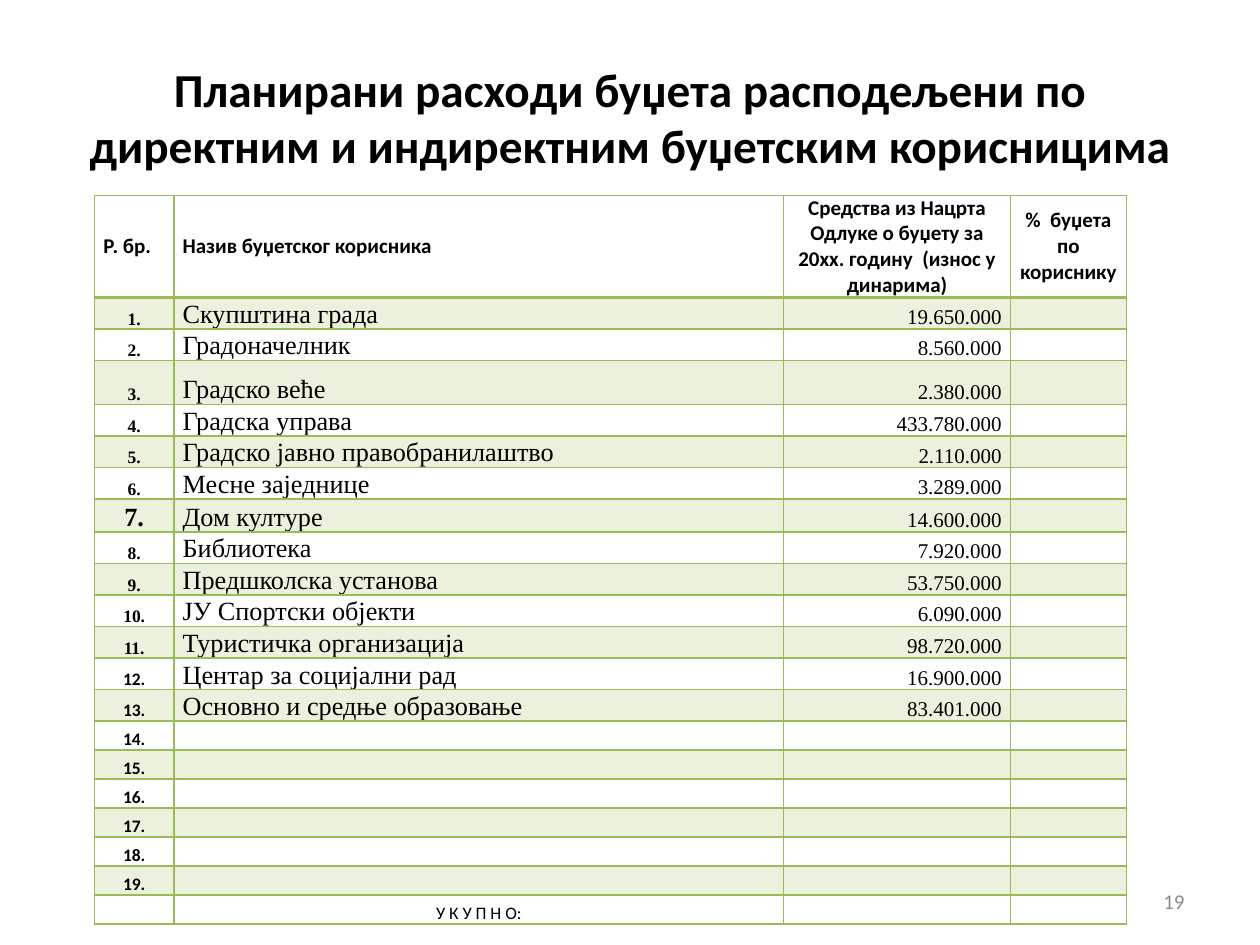
import dataclasses

import lxml.etree
import pptx
import pptx.dml.color
import pptx.enum.text
import pptx.oxml.ns
import pptx.util

Inches, Pt = pptx.util.Inches, pptx.util.Pt
ALIGN = pptx.enum.text.PP_ALIGN
ANCHOR = pptx.enum.text.MSO_ANCHOR
qn = pptx.oxml.ns.qn

COLORS = {"text": "000000", "green": "9BBB59", "number": "8C8C8C"}
SANS, SERIF = "Calibri", "Times New Roman"


@dataclasses.dataclass
class Style:
    size: float
    font: str = SANS
    bold: bool = False
    align: ALIGN = ALIGN.LEFT
    color: str = "text"


@dataclasses.dataclass
class Recipient:
    name: str = ""
    amount: str = ""
    height: float = 0.23
    number_size: int = 10


HEADERS = [
    ("Р. бр.", ALIGN.LEFT),
    ("Назив буџетског корисника", ALIGN.LEFT),
    ("Средства из Нацрта Одлуке о буџету за 20хх. годину  (износ у динарима)",
     ALIGN.CENTER),
    ("%  буџета по кориснику", ALIGN.CENTER),
]
RECIPIENTS = [
    Recipient("Скупштина града", "19.650.000"),
    Recipient("Градоначелник", "8.560.000", height=0.25),
    Recipient("Градско веће", "2.380.000", height=0.35),
    Recipient("Градска управа", "433.780.000"),
    Recipient("Градско јавно правобранилаштво", "2.110.000"),
    Recipient("Месне заједнице", "3.289.000"),
    Recipient("Дом културе", "14.600.000", height=0.26, number_size=15),
    Recipient("Библиотека", "7.920.000"),
    Recipient("Предшколска установа", "53.750.000"),
    Recipient("ЈУ Спортски објекти", "6.090.000"),
    Recipient("Туристичка организација", "98.720.000"),
    Recipient("Центар за социјални рад", "16.900.000"),
    Recipient("Основно и средње образовање", "83.401.000"),
] + [Recipient() for _ in range(6)]
COLUMN_WIDTHS = [0.63, 4.84, 1.8, 0.92]
HEADER_HEIGHT, TOTAL_HEIGHT = 0.81, 0.23
LAST_SERIF_NUMBER = 11

NAME = Style(15, SERIF)
AMOUNT = Style(12, SERIF, align=ALIGN.RIGHT)
SMALL = Style(10, align=ALIGN.CENTER)


def write(tf, text: str, style: Style) -> None:
    p = tf.paragraphs[0]
    p.alignment = style.align
    if not text:
        # An empty cell keeps a small line height
        end = lxml.etree.SubElement(p._p, qn("a:endParaRPr"))
        end.set("sz", str(int(style.size * 100)))
        return
    r = p.add_run()
    r.text = text
    formats = {"size": Pt(style.size), "name": style.font, "bold": style.bold}
    for key, value in formats.items():
        setattr(r.font, key, value)
    r.font.color.rgb = pptx.dml.color.RGBColor.from_string(COLORS[style.color])


def add_text(slide, box: tuple, text: str, style: Style) -> None:
    sp = slide.shapes.add_textbox(*map(Inches, box))
    tf = sp.text_frame
    tf.word_wrap = True
    tf.vertical_anchor = ANCHOR.MIDDLE
    write(tf, text, style)


def set_borders(cell, widths: dict[str, float]) -> None:
    tc_pr = cell._tc.get_or_add_tcPr()
    for i, (side, width) in enumerate(widths.items()):
        ln = lxml.etree.Element(qn(f"a:ln{side}"), w=str(Pt(width)))
        fill = lxml.etree.SubElement(ln, qn("a:solidFill"))
        lxml.etree.SubElement(fill, qn("a:srgbClr"), val=COLORS["green"])
        tc_pr.insert(i, ln)


def set_fill(cell, banded: bool) -> None:
    if not banded:
        cell.fill.background()
        return
    cell.fill.solid()
    cell.fill.fore_color.rgb = pptx.dml.color.RGBColor.from_string(COLORS["green"])
    clr = cell._tc.tcPr.find(".//" + qn("a:srgbClr"))
    lxml.etree.SubElement(clr, qn("a:alpha"), val="20000")


def table_rows() -> list[list[tuple[str, Style]]]:
    rows = [[(text, Style(12, bold=True, align=align)) for text, align in HEADERS]]
    for n, item in enumerate(RECIPIENTS, 1):
        font = SERIF if n <= LAST_SERIF_NUMBER else SANS
        number = Style(item.number_size, font, True, ALIGN.CENTER)
        rows.append([
            (f"{n}.", number),
            (item.name, NAME if item.name else SMALL),
            (item.amount, AMOUNT if item.amount else SMALL),
            ("", SMALL),
        ])
    rows.append([(text, SMALL) for text in ("", "У К У П Н О:", "", "")])
    return rows


def add_budget_table(slide) -> None:
    rows = table_rows()
    heights = [HEADER_HEIGHT, *(item.height for item in RECIPIENTS), TOTAL_HEIGHT]
    frame = slide.shapes.add_table(
        len(rows), len(COLUMN_WIDTHS), Inches(0.75), Inches(1.55),
        Inches(sum(COLUMN_WIDTHS)), Inches(sum(heights)))
    table = frame.table
    table.first_row = table.horz_banding = False
    for column, width in zip(table.columns, COLUMN_WIDTHS):
        column.width = Inches(width)
    for i, (row, height) in enumerate(zip(rows, heights)):
        table.rows[i].height = Inches(height)
        for j, (text, style) in enumerate(row):
            cell = table.cell(i, j)
            formats = {
                "margin_left": Inches(0.07), "margin_right": Inches(0.07),
                "margin_top": 0, "margin_bottom": 0,
                "vertical_anchor": ANCHOR.BOTTOM if i else ANCHOR.MIDDLE,
            }
            for key, value in formats.items():
                setattr(cell, key, value)
            write(cell.text_frame, text, style)
            set_fill(cell, i % 2 == 1)
            # The rule under the header is heavier
            set_borders(cell, {"L": 1, "R": 1, "T": 2 if i == 1 else 1,
                               "B": 1 if i else 2})


def main() -> None:
    prs = pptx.Presentation()
    prs.slide_width, prs.slide_height = Inches(10), Inches(7.5)
    s = prs.slides.add_slide(prs.slide_layouts[6])

    # Title
    add_text(s, (0.5, 0.3, 9, 1.25),
             "Планирани расходи буџета расподељени по директним и индиректним "
             "буџетским корисницима",
             Style(27, bold=True, align=ALIGN.CENTER))
    # Budget by recipient
    add_budget_table(s)
    # Slide number
    add_text(s, (7.17, 6.95, 2.33, 0.4), "19",
             Style(12, align=ALIGN.RIGHT, color="number"))

    prs.save("out.pptx")


if __name__ == "__main__":
    main()
